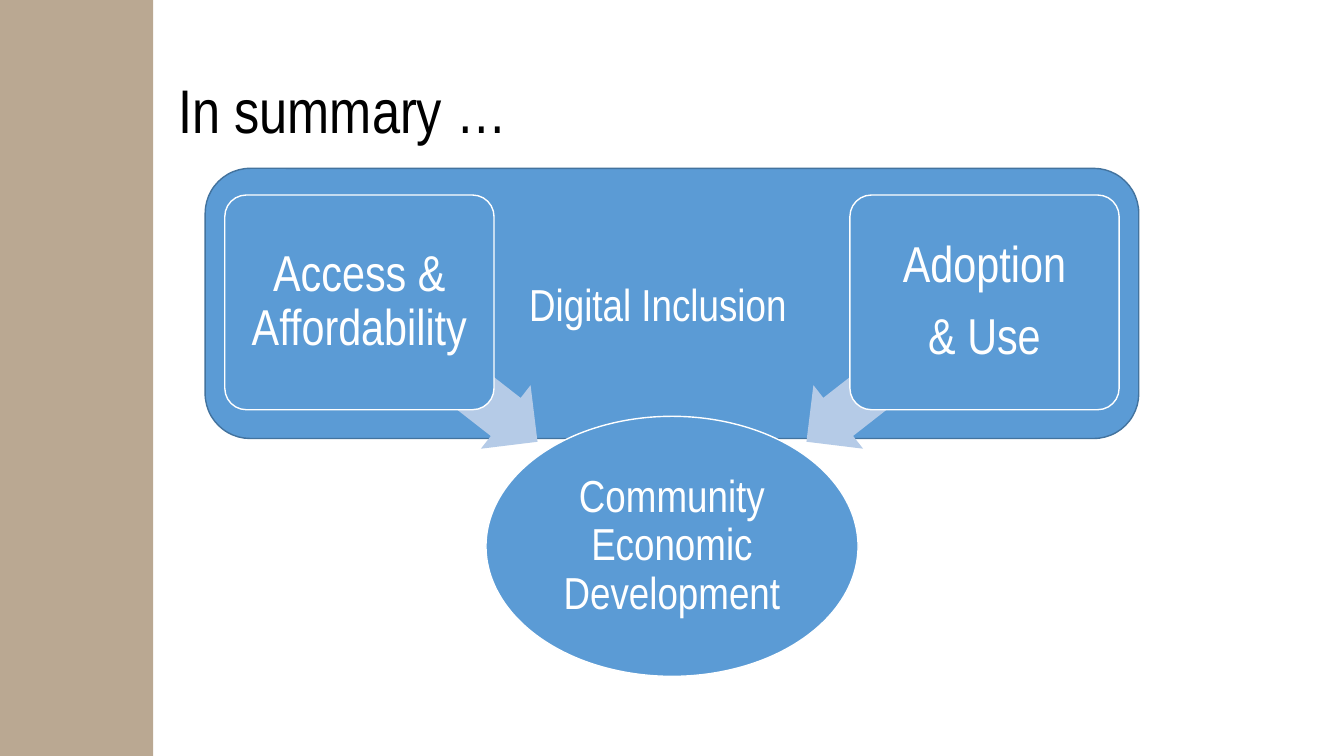
from pptx import Presentation
from pptx.dml.color import RGBColor
from pptx.enum.shapes import MSO_SHAPE
from pptx.enum.text import MSO_ANCHOR, PP_ALIGN
from pptx.util import Inches, Pt

TITLE = "In summary …"
BANNER = "Digital Inclusion"
OUTCOME = ["Community Economic Development"]
# side of the centre line, paragraphs, arrow rotation
PILLARS = [
    (-1, ["Access & Affordability"], 218),
    (1, ["Adoption", "& Use"], 322),
]

FONT = "Arial Narrow"
TAN = RGBColor(0xBA, 0xA8, 0x92)
BLUE = RGBColor(0x5B, 0x9B, 0xD5)
DARK_BLUE = RGBColor(0x43, 0x73, 0x9E)
PALE_BLUE = RGBColor(0xB5, 0xCB, 0xE7)
WHITE = RGBColor(0xFF, 0xFF, 0xFF)
BLACK = RGBColor(0, 0, 0)

SLIDE_W, SLIDE_H = 13.33, 7.5
MID_X = SLIDE_W / 2
PILLAR_OFFSET, PILLAR_Y = 3.1, 3.0
ARROW_OFFSET, ARROW_Y = 2.22, 3.69

prs = Presentation()
prs.slide_width, prs.slide_height = Inches(SLIDE_W), Inches(SLIDE_H)
s = prs.slides.add_slide(prs.slide_layouts[6])


def add_centred(kind, cx, cy, w, h, fill, line=None):
    """Add a filled shape by its centre point, in inches."""
    sp = s.shapes.add_shape(kind, Inches(cx - w / 2), Inches(cy - h / 2),
                            Inches(w), Inches(h))
    sp.shadow.inherit = False
    sp.fill.solid()
    sp.fill.fore_color.rgb = fill
    if line is None:
        sp.line.fill.background()
    else:
        sp.line.color.rgb = line
        sp.line.width = Pt(1)
    return sp


def add_run(p, text, size, color):
    r = p.add_run()
    r.text = text
    r.font.name, r.font.size = FONT, Pt(size)
    r.font.color.rgb = color


def fill_text(sp, lines, size, inset):
    tf = sp.text_frame
    tf.word_wrap = True
    tf.vertical_anchor = MSO_ANCHOR.MIDDLE
    tf.margin_left = tf.margin_right = Inches(inset)
    tf.margin_top = tf.margin_bottom = Inches(inset)
    for i, line in enumerate(lines):
        p = tf.add_paragraph() if i else tf.paragraphs[0]
        p.alignment = PP_ALIGN.CENTER
        p.line_spacing = 0.9
        p.space_after = Pt(size * 0.35)
        add_run(p, line, size, WHITE)


def add_label(text, x, y, w, h, size, color):
    tf = s.shapes.add_textbox(Inches(x), Inches(y), Inches(w), Inches(h)).text_frame
    tf.word_wrap = True
    tf.vertical_anchor = MSO_ANCHOR.MIDDLE
    p = tf.paragraphs[0]
    p.line_spacing = 0.9
    add_run(p, text, size, color)


add_centred(MSO_SHAPE.RECTANGLE, 0.76, SLIDE_H / 2, 1.52, SLIDE_H, TAN)
add_centred(MSO_SHAPE.ROUNDED_RECTANGLE, MID_X, 3.01, 9.26, 2.68, BLUE, DARK_BLUE)
add_label(BANNER, 5.15, 2.73, 3.02, 0.64, 32, WHITE)

outcome = add_centred(MSO_SHAPE.OVAL, MID_X, 5.42, 3.69, 2.58, BLUE, WHITE)
fill_text(outcome, OUTCOME, 32, 0.02)

for side, lines, rotation in PILLARS:
    arrow = add_centred(MSO_SHAPE.LEFT_ARROW, MID_X + side * ARROW_OFFSET, ARROW_Y,
                        2.25, 0.8, PALE_BLUE)
    arrow.adjustments[0] = 0.6
    arrow.rotation = rotation
    pillar = add_centred(MSO_SHAPE.ROUNDED_RECTANGLE, MID_X + side * PILLAR_OFFSET,
                         PILLAR_Y, 2.67, 2.13, BLUE, WHITE)
    pillar.adjustments[0] = 0.1
    fill_text(pillar, lines, 36, 0.07)

add_label(TITLE, 1.67, 0.4, 10.81, 1.45, 44, BLACK)

prs.save("out.pptx")
